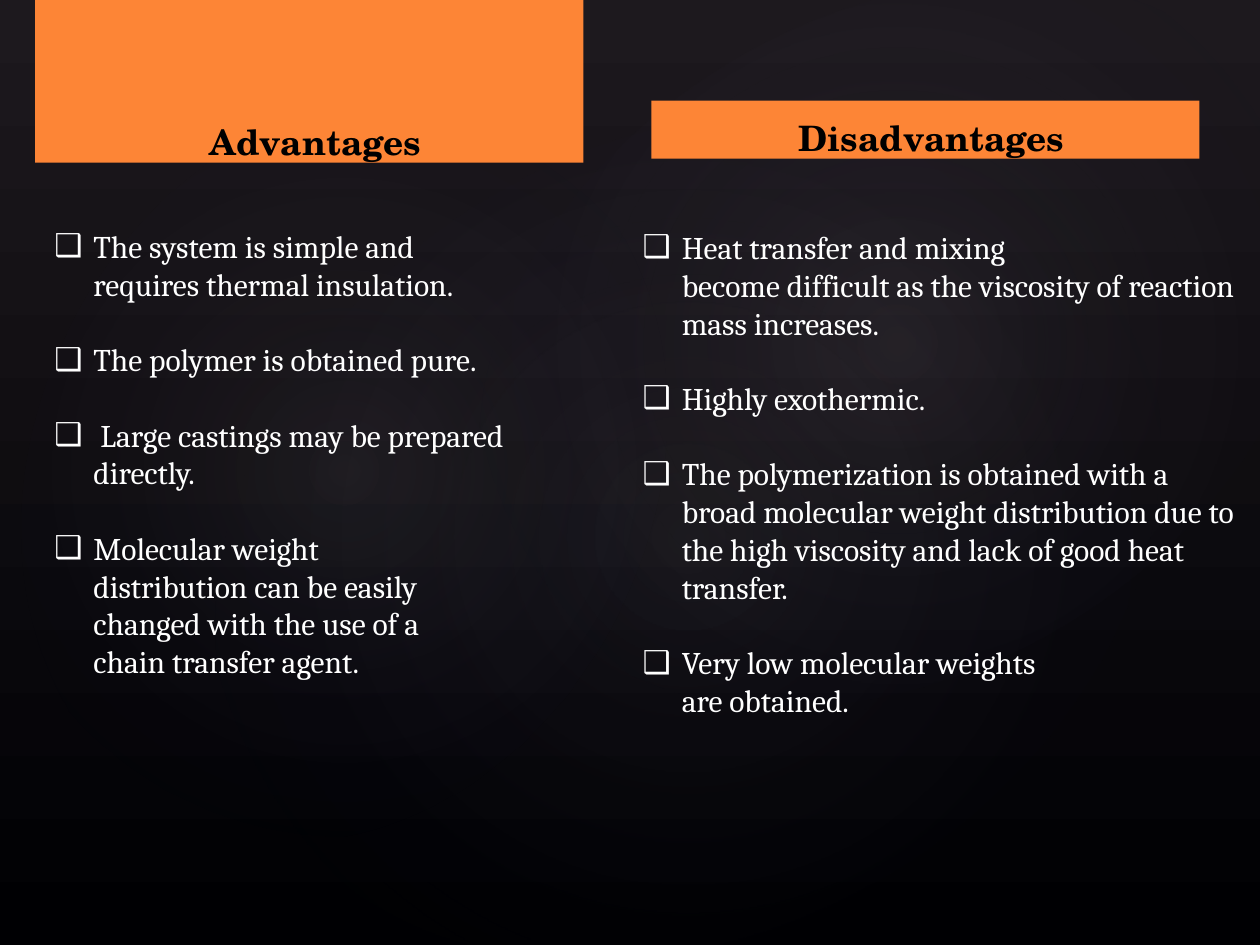
from dataclasses import dataclass
from lxml.etree import SubElement
from pptx import Presentation
from pptx.dml.color import RGBColor
from pptx.enum.shapes import MSO_SHAPE as Preset
from pptx.enum.text import MSO_ANCHOR as Anchor, MSO_AUTO_SIZE as AutoSize, PP_ALIGN as Align
from pptx.oxml import parse_xml
from pptx.oxml.ns import nsdecls, qn
from pptx.slide import Slide
from pptx.util import Cm, Pt

ADVANTAGES = [
    "The system is simple and\vrequires thermal insulation.",
    "The polymer is obtained pure.",
    " Large castings may be prepared directly.",
    "Molecular weight\vdistribution can be easily\vchanged with the use of a\vchain transfer agent.",
]
DISADVANTAGES = [
    "Heat transfer and mixing\vbecome difficult as the viscosity of reaction mass increases.",
    "Highly exothermic.",
    "The polymerization is obtained with a broad molecular weight distribution "
    "due to the high viscosity and lack of good heat transfer.",
    "Very low molecular weights\vare obtained.",
]
GLOWS = [
    ((3.81, 2.9, 20.12, 15.85), 328.7, 7),
    ((-0.76, 3.25, 15.39, 12.45), 294.3, 8),
    ((9.09, 0.33, 18.01, 13.21), 328.7, 8),
]


def color(code):
    return RGBColor.from_string(code)


@dataclass
class ComparisonSlide:
    """Style and current slide of an advantages and disadvantages page."""

    slide: Slide
    heading_font: str = "TeX Gyre Schola"
    body_font: str = "Cambria"
    accent: str = "FD8536"
    heading_color: str = "000000"
    body_color: str = "FFFFFF"
    glow_color: str = "C4BCC6"
    glow_edge: str = "242852"

    def place(self, shape, box):
        shape.left, shape.top, shape.width, shape.height = map(Cm, box)

    def set_font(self, paragraph, name, size, code, bold=False):
        font = paragraph.font
        font.name, font.size, font.bold = name, Pt(size), bold
        font.color.rgb = color(code)

    def background(self, top, bottom):
        fill = self.slide.background.fill
        fill.gradient()
        fill.gradient_angle = 270
        for stop, code in zip(fill.gradient_stops, (top, bottom)):
            stop.color.rgb = color(code)

    def glow(self, box, rotation, opacity):
        shape = self.slide.shapes.add_shape(Preset.OVAL, *map(Cm, box))
        shape.rotation = rotation
        shape.shadow.inherit = False
        shape.line.fill.background()
        shape.fill.background()
        properties = shape.element.spPr
        gradient = parse_xml(
            f'<a:gradFill {nsdecls("a")}><a:gsLst>'
            f'<a:gs pos="0"><a:srgbClr val="{self.glow_color}"><a:alpha val="{opacity * 1000}"/></a:srgbClr></a:gs>'
            f'<a:gs pos="58000"><a:srgbClr val="{self.glow_edge}"><a:alpha val="0"/></a:srgbClr></a:gs>'
            '</a:gsLst><a:path path="circle"><a:fillToRect l="50000" t="50000" r="50000" b="50000"/></a:path>'
            '</a:gradFill>')
        properties.replace(properties.find(qn("a:noFill")), gradient)
        self.slide.shapes.title.element.addprevious(shape.element)

    def heading(self, shape, text, box):
        self.place(shape, box)
        shape.fill.solid()
        shape.fill.fore_color.rgb = color(self.accent)
        shape.line.fill.background()
        frame = shape.text_frame
        frame.auto_size = AutoSize.NONE
        frame.word_wrap = True
        frame.vertical_anchor = Anchor.BOTTOM
        frame.margin_left = frame.margin_right = frame.margin_bottom = 0
        frame.margin_top = Cm(0.33)
        paragraph = frame.paragraphs[0]
        paragraph.text = text
        paragraph.alignment = Align.CENTER
        paragraph._p.get_or_add_pPr().set("marL", str(Cm(0.25)))
        self.set_font(paragraph, self.heading_font, 20, self.heading_color, True)

    def title(self, text, box):
        self.heading(self.slide.shapes.title, text, box)

    def banner(self, text, box):
        shape = self.slide.shapes.add_shape(Preset.RECTANGLE, *map(Cm, box))
        shape.shadow.inherit = False
        self.heading(shape, text, box)

    def bullets(self, index, items, box):
        shape = self.slide.placeholders[index]
        self.place(shape, box)
        frame = shape.text_frame
        frame.auto_size = AutoSize.NONE
        frame.word_wrap = True
        for number, item in enumerate(items):
            paragraph = frame.add_paragraph() if number else frame.paragraphs[0]
            paragraph.text = item
            properties = paragraph._p.get_or_add_pPr()
            properties.set("marL", str(Cm(0.79)))
            properties.set("indent", str(-Cm(0.79)))
            SubElement(properties, qn("a:buChar"), char="❑")
            paragraph.space_before = Pt(0)
            paragraph.space_after = Pt(21.5)
            self.set_font(paragraph, self.body_font, 18, self.body_color)


def main():
    presentation = Presentation()
    presentation.slide_width, presentation.slide_height = Cm(25.4), Cm(19.05)
    page = ComparisonSlide(presentation.slides.add_slide(presentation.slide_layouts[3]))
    page.background("1D191E", "000003")
    for glow in GLOWS:
        page.glow(*glow)
    page.title("Advantages", (0.71, 0, 11.05, 3.28))
    page.bullets(1, ADVANTAGES, (0.84, 4.45, 9.73, 11.02))
    page.banner("Disadvantages", (13.13, 2.03, 11.05, 1.17))
    page.bullets(2, DISADVANTAGES, (12.7, 4.47, 12.7, 11.02))
    presentation.save("out.pptx")


if __name__ == "__main__":
    main()
